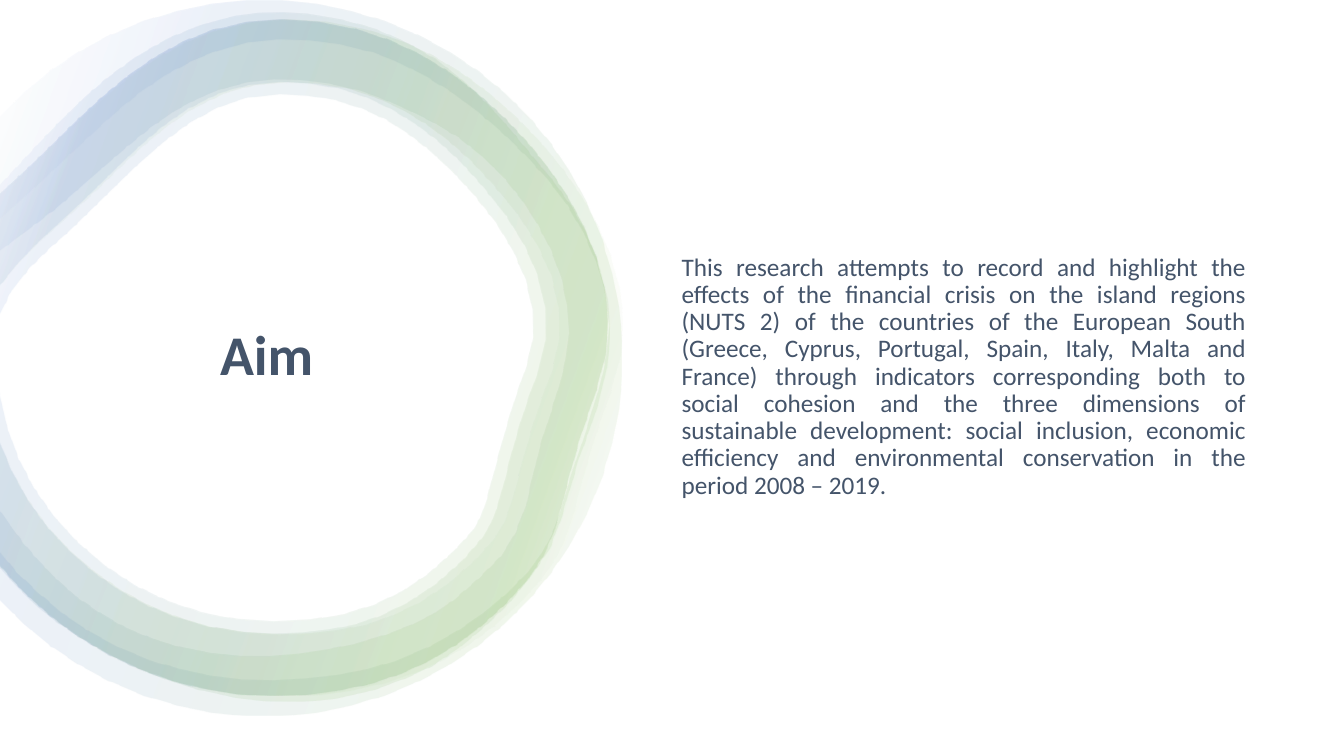
from math import acos, ceil, cos, dist, sin

from lxml import etree
from pptx import Presentation
from pptx.dml.color import RGBColor
from pptx.enum.shapes import MSO_SHAPE
from pptx.enum.text import MSO_ANCHOR, PP_ALIGN
from pptx.oxml.ns import qn
from pptx.util import Inches, Pt

WHITE, GREEN, BLUE, SLATE = "FFFFFF", "70AD47", "4472C4", "44546A"
LEFT = -0.01
SEGMENT = 0.35

AIM = (
    "This research attempts to record and highlight the effects of the financial crisis "
    "on the island regions (NUTS 2) of the countries of the European South (Greece, Cyprus, "
    "Portugal, Spain, Italy, Malta and France) through indicators corresponding both to "
    "social cohesion and the three dimensions of sustainable development: social inclusion, "
    "economic efficiency and environmental conservation in the period 2008 – 2019."
)

# Wavy and round bands: points that the edges pass through
WAVY_OUTER = [
    (LEFT, 1.85), (0.6, 1.2), (1.08, 0.76), (1.65, 0.39), (2.33, 0.16), (3.04, 0.14),
    (3.72, 0.29), (4.33, 0.6), (4.83, 1.04), (5.25, 1.53), (5.65, 2.04), (5.93, 2.64),
    (6.04, 3.3), (5.93, 3.97), (5.73, 4.54), (5.56, 5.12), (5.44, 5.44), (5.04, 5.98),
    (4.55, 6.42), (4.27, 6.61), (3.65, 6.86), (2.99, 6.96), (2.33, 6.92), (1.7, 6.76),
    (1.1, 6.5), (0.55, 6.16), (0.24, 5.89), (LEFT, 5.62),
]
WAVY_INNER = [
    (LEFT, 5.04), (0.24, 5.39), (0.53, 5.71), (0.75, 5.91), (1.24, 6.22), (1.8, 6.42),
    (2.38, 6.5), (2.96, 6.48), (3.52, 6.38), (4.06, 6.2), (4.49, 5.95), (4.96, 5.51),
    (5.1, 5.28), (5.2, 5.02), (5.34, 4.43), (5.53, 3.83), (5.63, 3.3), (5.55, 2.75),
    (5.32, 2.23), (4.98, 1.76), (4.54, 1.37), (4.03, 1.09), (3.52, 0.89), (2.98, 0.8),
    (2.45, 0.82), (1.96, 0.98), (1.49, 1.27), (0.81, 1.85), (0.57, 2.06), (LEFT, 2.5),
]
ROUND_INNER = [
    (LEFT, 5.45), (0.16, 5.66), (0.64, 6.09), (1.19, 6.42), (1.78, 6.63), (2.4, 6.73),
    (3.03, 6.72), (3.65, 6.63), (4.23, 6.42), (4.77, 6.09), (5.23, 5.67), (5.48, 5.27),
    (5.63, 4.8), (5.93, 3.86), (6.04, 3.23), (5.91, 2.6), (5.62, 2.03), (5.21, 1.54),
    (4.74, 1.11), (4.23, 0.76), (3.67, 0.51), (3.07, 0.4), (2.46, 0.42), (1.89, 0.61),
    (1.37, 0.93), (0.89, 1.35), (0.41, 1.8), (LEFT, 2.18),
]
# Plain bands: Bézier chains, an anchor followed by two control points
PLAIN_OUTER = [
    (LEFT, 1.93), (0.2, 1.74), (0.39, 1.56), (0.55, 1.4), (1.18, 0.77), (1.82, 0.19),
    (2.78, 0.19), (3.83, 0.19), (4.61, 0.7), (5.25, 1.43), (5.78, 2.05), (6.25, 2.94),
    (5.91, 3.87), (5.45, 5.11), (5.65, 5.35), (5.02, 5.98), (4.39, 6.61), (3.67, 6.9),
    (2.7, 6.9), (1.75, 6.9), (0.89, 6.51), (0.26, 5.89), (0.17, 5.8), (0.08, 5.7),
    (LEFT, 5.59),
]
THIN_INNER = [
    (LEFT, 4.35), (0.15, 4.79), (0.36, 5.14), (0.69, 5.46), (1.23, 5.99), (1.94, 6.28),
    (2.7, 6.28), (3.11, 6.28), (3.46, 6.23), (3.76, 6.11), (4.06, 5.99), (4.33, 5.81),
    (4.59, 5.55), (4.77, 5.37), (4.83, 5.26), (4.87, 5.18), (4.92, 5.07), (4.96, 4.93),
    (5.01, 4.73), (5.07, 4.48), (5.16, 4.13), (5.34, 3.66), (5.44, 3.37), (5.44, 3.06),
    (5.33, 2.73), (5.23, 2.44), (5.04, 2.13), (4.78, 1.84), (4.49, 1.49), (4.19, 1.25),
    (3.88, 1.08), (3.54, 0.89), (3.18, 0.81), (2.78, 0.81), (2.46, 0.81), (2.17, 0.89),
    (1.86, 1.08), (1.55, 1.27), (1.26, 1.56), (0.98, 1.84), (0.85, 1.97), (0.73, 2.08),
    (0.6, 2.2), (0.36, 2.41), (0.14, 2.63), (LEFT, 2.85),
]
THICK_INNER = [
    (LEFT, 3.84), (0.08, 4.46), (0.35, 4.96), (0.77, 5.37), (1.29, 5.88), (1.98, 6.16),
    (2.71, 6.16), (3.48, 6.16), (4.01, 5.95), (4.5, 5.46), (4.67, 5.3), (4.73, 5.2),
    (4.76, 5.13), (4.81, 5.03), (4.84, 4.89), (4.89, 4.7), (4.96, 4.45), (5.04, 4.1),
    (5.22, 3.62), (5.32, 3.35), (5.31, 3.08), (5.21, 2.77), (5.11, 2.49), (4.94, 2.2),
    (4.69, 1.92), (4.4, 1.59), (4.12, 1.35), (3.82, 1.18), (3.5, 1.01), (3.16, 0.93),
    (2.78, 0.93), (2.12, 0.93), (1.65, 1.34), (1.07, 1.92), (0.94, 2.05), (0.81, 2.17),
    (0.69, 2.29), (0.45, 2.5), (0.12, 2.77), (LEFT, 3.14),
]


def color(value):
    return RGBColor.from_string(value)


def bezier(chain):
    """Flatten a chain of cubic curves into points about one segment apart."""
    points = [chain[0]]
    for i in range(0, len(chain) - 1, 3):
        curve = chain[i:i + 4]
        steps = ceil(dist(curve[0], curve[3]) / SEGMENT)
        for step in range(1, steps + 1):
            t = step / steps
            weights = ((1 - t) ** 3, 3 * t * (1 - t) ** 2, 3 * t * t * (1 - t), t ** 3)
            points.append(tuple(
                sum(w * p[axis] for w, p in zip(weights, curve)) for axis in (0, 1)))
    return points


def smooth(knots):
    """Flatten a smooth curve that passes through all knots."""
    padded = [knots[0], *knots, knots[-1]]
    chain = [knots[0]]
    for a, b, c, d in zip(padded, padded[1:], padded[2:], padded[3:]):
        chain += [(b[0] + (c[0] - a[0]) / 6, b[1] + (c[1] - a[1]) / 6),
                  (c[0] - (d[0] - b[0]) / 6, c[1] - (d[1] - b[1]) / 6), c]
    return bezier(chain)


def circle_edge(center_x, center_y, radius):
    """Clockwise arc that starts and ends at the left edge."""
    half = acos((LEFT - center_x) / radius)
    count = ceil(2 * half * radius / SEGMENT)
    angles = [-half + 2 * half * i / count for i in range(count + 1)]
    return [(center_x + radius * cos(a), center_y + radius * sin(a)) for a in angles]


def fade(shape, stops, angle=200, alpha=10):
    """Fill with a translucent linear gradient."""
    shape.fill.gradient()
    gradient = shape.element.spPr.find(qn("a:gradFill"))
    for child in list(gradient):
        gradient.remove(child)
    stop_list = etree.SubElement(gradient, qn("a:gsLst"))
    for position, value in stops:
        stop = etree.SubElement(stop_list, qn("a:gs"), pos=str(position * 1000))
        tone = etree.SubElement(stop, qn("a:srgbClr"), val=value)
        etree.SubElement(tone, qn("a:alpha"), val=str(alpha * 1000))
    etree.SubElement(gradient, qn("a:lin"), ang=str(angle * 60000), scaled="0")


def add_band(group, points, stops, stretch=1):
    corners = [(Inches(LEFT + (x - LEFT) * stretch), Inches(y)) for x, y in points]
    builder = group.shapes.build_freeform(*corners[0])
    builder.add_line_segments(corners[1:], close=True)
    band = builder.convert_to_shape()
    band.shadow.inherit = False
    band.line.fill.background()
    fade(band, stops)


def add_backdrop(page, deck):
    backdrop = page.shapes.add_shape(
        MSO_SHAPE.RECTANGLE, 0, 0, deck.slide_width, deck.slide_height)
    backdrop.shadow.inherit = False
    backdrop.fill.solid()
    backdrop.fill.fore_color.rgb = color(WHITE)
    backdrop.line.fill.background()


def add_ring(page):
    group = page.shapes.add_group_shape()
    plain_stops = [(2, WHITE), (16, GREEN), (85, BLUE), (100, WHITE)]
    thin = bezier(PLAIN_OUTER) + bezier(THIN_INNER)
    add_band(group, smooth(WAVY_OUTER) + smooth(WAVY_INNER),
             [(37, GREEN), (85, BLUE), (100, WHITE)])
    add_band(group, thin, [(2, WHITE), (54, GREEN), (100, WHITE)], stretch=1.025)
    add_band(group, bezier(PLAIN_OUTER) + bezier(THICK_INNER), plain_stops)
    add_band(group, thin, plain_stops)
    add_band(group, circle_edge(2.62, 3.55, 3.55) + smooth(ROUND_INNER),
             [(2, WHITE), (16, GREEN), (74, BLUE), (100, WHITE)])


def fill_placeholder(holder, place, text, size, align, bold=False):
    """Move a placeholder in front of the ring and set its text."""
    holder.element.getparent().append(holder.element)
    holder.left, holder.top, holder.width, holder.height = map(Inches, place)
    frame = holder.text_frame
    frame.text = text
    frame.word_wrap = True
    frame.vertical_anchor = MSO_ANCHOR.MIDDLE
    para = frame.paragraphs[0]
    properties = para._p.get_or_add_pPr()
    properties.set("marL", "0")
    properties.set("indent", "0")
    etree.SubElement(properties, qn("a:buNone"))
    para.alignment = align
    para.line_spacing = 0.9
    para.space_before = Pt(0)
    para.font.name = "Calibri"
    para.font.size = Pt(size)
    para.font.bold = bold
    para.font.color.rgb = color(SLATE)


def main():
    deck = Presentation()
    deck.slide_width, deck.slide_height = Inches(13.33), Inches(7.5)
    page = deck.slides.add_slide(deck.slide_layouts[1])
    add_backdrop(page, deck)
    add_ring(page)
    title, body = page.placeholders
    fill_placeholder(title, (0.64, 2.04, 4.01, 3.02), "Aim", 40, PP_ALIGN.CENTER, bold=True)
    fill_placeholder(body, (6.66, 0.88, 5.8, 5.72), AIM, 18, PP_ALIGN.JUSTIFY)
    deck.save("out.pptx")


if __name__ == "__main__":
    main()
